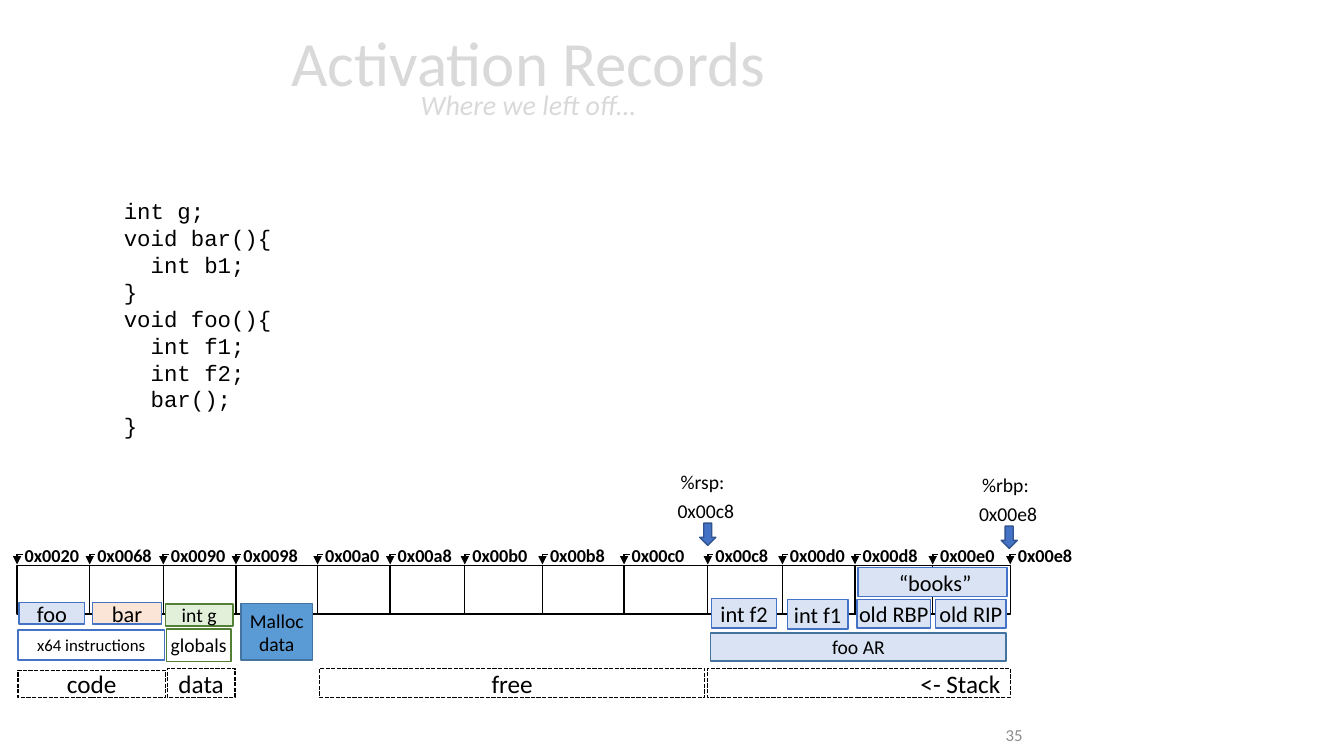
from itertools import pairwise

from lxml import etree
from pptx import Presentation
from pptx import util as u
from pptx.dml.color import RGBColor
from pptx.enum import dml, shapes, text
from pptx.oxml import ns

BLACK, WHITE, GREY, TITLE_GREY = "000000", "FFFFFF", "8C8C8C", "D9D9D9"
BLUE, DARK_BLUE, STEEL, PALE_BLUE, SKY = "4472C4", "325491", "43739E", "DAE3F3", "5B9BD5"
GREEN, PALE_GREEN, PEACH = "538035", "E2F0D9", "FBE5D6"
LEFT, CENTER, RIGHT = text.PP_ALIGN.LEFT, text.PP_ALIGN.CENTER, text.PP_ALIGN.RIGHT
TOP, MIDDLE = text.MSO_ANCHOR.TOP, text.MSO_ANCHOR.MIDDLE


def rgb(value):
    return RGBColor.from_string(value)


class Deck:
    font, mono = "Calibri", "Courier New"

    def __init__(self):
        self.prs = Presentation()
        self.prs.slide_width, self.prs.slide_height = u.Inches(13.33), u.Inches(7.5)
        self.cell = self.prs.slide_height / 75
        self.s = self.prs.slides.add_slide(self.prs.slide_layouts[5])
        self.target = self.s.shapes

    def grid(self, *units):
        return [u.Emu(round(n * self.cell)) for n in units]

    def set_text(self, tf, words, size, color=BLACK, align=LEFT, font=None, bold=False):
        tf.text = words
        for p in tf.paragraphs:
            p.alignment = align
            for r in p.runs:
                f = r.font
                f.name, f.size, f.bold = font or self.font, u.Pt(size), bold
                f.color.rgb = rgb(color)

    def title(self, at, words, subtitle):
        sp = self.s.shapes.title
        sp.left, sp.top, sp.width, sp.height = self.grid(*at)
        tf = sp.text_frame
        self.set_text(tf, f"{words}\v{subtitle}", 45, TITLE_GREY, CENTER)
        tf.vertical_anchor, tf.auto_size = MIDDLE, text.MSO_AUTO_SIZE.NONE
        p = tf.paragraphs[0]
        p.line_spacing = 0.7
        p.runs[-1].font.size, p.runs[-1].font.italic = u.Pt(20), True

    def label(self, at, words, size, inset=True, wrap=False, anchor=TOP, **style):
        sp = self.target.add_textbox(*self.grid(*at))
        tf = sp.text_frame
        self.set_text(tf, words, size, **style)
        tf.word_wrap, tf.vertical_anchor = wrap, anchor
        if not inset:
            tf.margin_left = tf.margin_right = tf.margin_top = tf.margin_bottom = 0

    def box(self, at, words="", size=16, fill=None, line=BLACK, dashed=False,
            inset=1, align=CENTER, kind=shapes.MSO_SHAPE.RECTANGLE):
        sp = self.target.add_shape(kind, *self.grid(*at))
        sp.shadow.inherit = False
        if fill:
            sp.fill.solid()
            sp.fill.fore_color.rgb = rgb(fill)
        else:
            sp.fill.background()
        sp.line.color.rgb, sp.line.width = rgb(line), u.Pt(1)
        if dashed:
            sp.line.dash_style = dml.MSO_LINE.SQUARE_DOT
        if words:
            tf = sp.text_frame
            self.set_text(tf, words, size, align=align)
            tf.vertical_anchor = MIDDLE
            tf.margin_left = tf.margin_right = self.grid(inset)[0]

    def line(self, *ends, arrow=False):
        c = self.target.add_connector(shapes.MSO_CONNECTOR.STRAIGHT, *self.grid(*ends))
        c.line.color.rgb, c.line.width = rgb(BLACK), u.Pt(1.25)
        spPr = c.element.spPr
        if arrow:
            etree.SubElement(spPr.find(ns.qn("a:ln")), ns.qn("a:tailEnd"), type="triangle")
        etree.SubElement(spPr, ns.qn("a:effectLst"))

    def address(self, x, words):
        self.target = self.s.shapes.add_group_shape().shapes
        self.label((x + 0.75, 54, 5.8, 2.2), words, 13, inset=False, wrap=True, bold=True)
        self.line(x, 55, x, 56, arrow=True)
        self.line(x - 0.05, 55, x + 0.55, 55)
        self.target = self.s.shapes

    def register(self, x, y, name, value):
        self.label((x - 2.7, y, 5, 2.4), name, 14, inset=False)
        self.label((x - 3, y + 2.9, 5.8, 2.4), value, 14, inset=False)
        self.box((x - 0.8, y + 5.3, 1.6, 2.2), fill=BLUE, line=DARK_BLUE,
                 kind=shapes.MSO_SHAPE.DOWN_ARROW)


CODE = """int g;
void bar(){
  int b1;
}
void foo(){
  int f1;
  int f2;
  bar();
}"""

ADDRESSES = {
    "0x0020": 1.7, "0x0068": 8.9, "0x0090": 16.2, "0x0098": 23.4, "0x00a0": 31.5,
    "0x00a8": 38.7, "0x00b0": 46.1, "0x00b8": 53.8, "0x00c0": 61.9, "0x00c8": 70.2,
    "0x00d0": 77.6, "0x00d8": 84.8, "0x00e0": 92.5, "0x00e8": 100.2,
}

SEGMENTS = [
    ((1.8, 66.5, 14.6, 2.7), "code", CENTER),
    ((16.6, 66.3, 6.7, 2.9), "data", CENTER),
    ((31.7, 66.3, 38.2, 2.9), "free", CENTER),
    ((70.2, 66.3, 30, 2.9), "<- Stack", RIGHT),
]

CONTENTS = [
    ((16.5, 62.4, 6.4, 3.2), "globals", 14, WHITE, GREEN, 0),
    ((23.9, 59.9, 7.1, 5.6), "Malloc data", 14, SKY, STEEL, 0),
    ((70.5, 62.8, 29.3, 2.8), "foo AR", 14, PALE_BLUE, STEEL, 1),
    ((78.1, 59.5, 6, 2.9), "int f1", 16, PALE_BLUE, BLUE, 0),
    ((16.4, 59.9, 6.7, 2.2), "int g", 14, PALE_GREEN, GREEN, 1),
    ((1.8, 62.5, 14.5, 3), "x64 instructions", 12, WHITE, BLUE, 1),
    ((1.9, 59.8, 6.5, 2.1), "foo", 16, PALE_BLUE, BLUE, 1),
    ((9.2, 59.8, 6.8, 2.1), "bar", 16, PEACH, BLUE, 1),
    ((70.6, 59.4, 6.4, 2.9), "int f2", 16, PALE_BLUE, BLUE, 0),
    ((85, 59.5, 7.3, 2.8), "old RBP", 16, PALE_BLUE, BLUE, 0),
    ((92.8, 59.5, 7, 2.8), "old RIP", 16, PALE_BLUE, BLUE, 0),
    ((85.1, 56.3, 14.8, 2.9), " “books”", 16, PALE_BLUE, BLUE, 1),
]


def main():
    d = Deck()
    d.title((9.3, 0.9, 86.2, 14.5), "Activation Records", "Where we left off…")
    d.label((79.9, 70.9, 22.5, 4), "35", 12, wrap=True, anchor=MIDDLE, color=GREY, align=RIGHT)
    d.label((11.3, 19.1, 16.9, 25.2), CODE, 16, font=d.mono)
    for x, end in pairwise(ADDRESSES.values()):
        d.box((x, 56.1, end - x, 4.8), fill=WHITE)
    for at, words, align in SEGMENTS:
        d.box(at, words, 18, dashed=True, align=align)
    for at, words, size, fill, line, inset in CONTENTS:
        d.box(at, words, size, fill, line, inset=inset)
    for words, x in ADDRESSES.items():
        d.address(x, words)
    d.register(70.2, 46.6, "%rsp:", "0x00c8")
    d.register(100.1, 46.9, "%rbp:", "0x00e8")
    d.prs.save("out.pptx")


if __name__ == "__main__":
    main()
